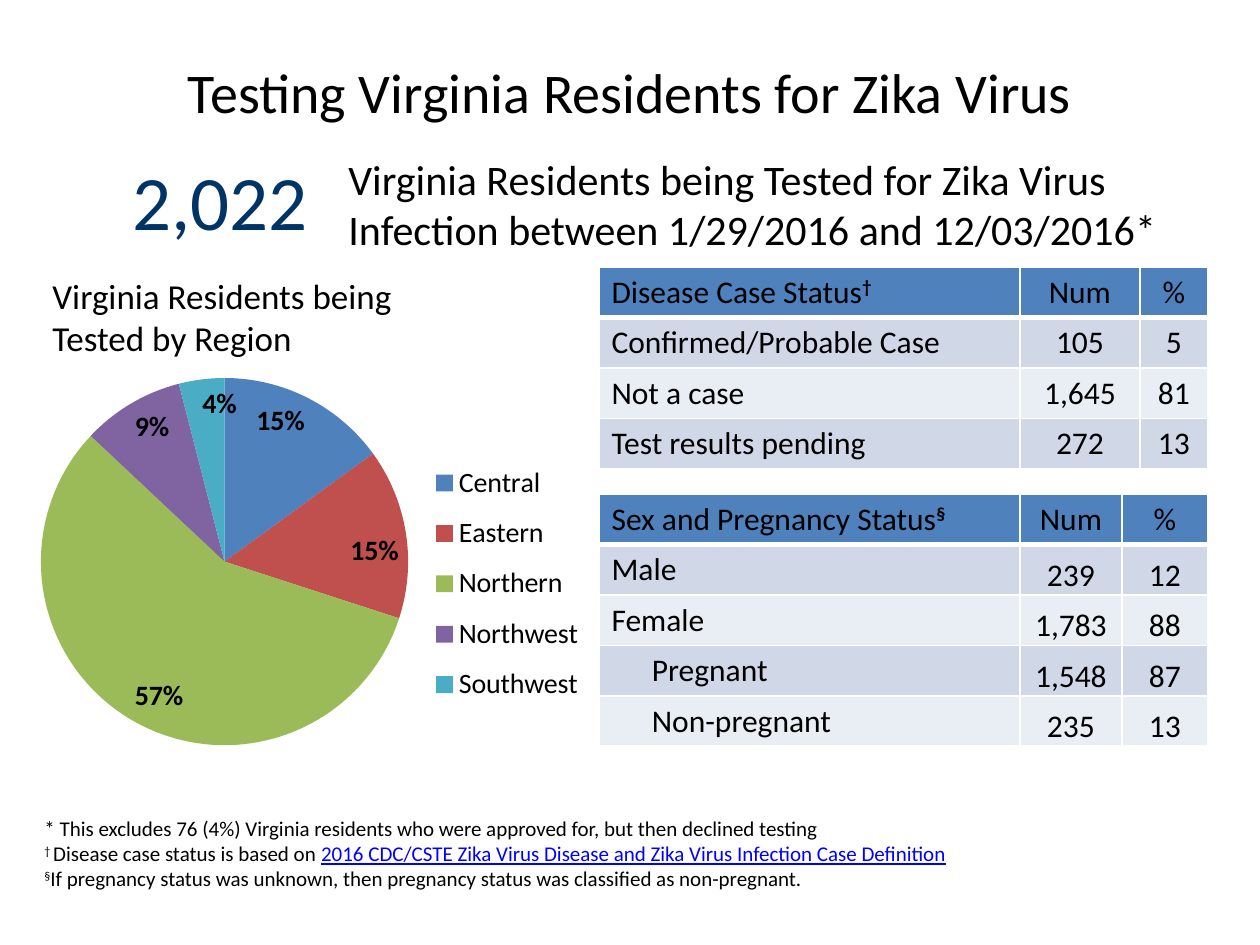
from lxml import etree
from pptx import Presentation
from pptx.chart.data import CategoryChartData
from pptx.dml.color import RGBColor
from pptx.enum.chart import XL_CHART_TYPE, XL_LABEL_POSITION, XL_LEGEND_POSITION
from pptx.enum.text import MSO_ANCHOR, PP_ALIGN
from pptx.oxml import parse_xml
from pptx.oxml.ns import nsdecls, qn
from pptx.util import Emu, Inches, Pt

FONT = "Calibri"
COLORS = {
    "text": "000000",
    "total": "003366",
    "link": "0000FF",
    "header": "4F81BD",
    "band_dark": "D0D8E8",
    "band_light": "E9EDF4",
    "border": "FFFFFF",
}
REGIONS = {
    "Central": (15, "4F81BD"),
    "Eastern": (15, "C0504D"),
    "Northern": (57, "9BBB59"),
    "Northwest": (9, "8064A2"),
    "Southwest": (4, "4BACC6"),
}
CASE_ROWS = [
    ("Confirmed/Probable Case", "105", "5"),
    ("Not a case", "1,645", "81"),
    ("Test results pending", "272", "13"),
]
SEX_ROWS = [
    ("Male", "239", "12"),
    ("Female", "1,783", "88"),
    ("Pregnant", "1,548", "87"),
    ("Non-pregnant", "235", "13"),
]
SUBGROUPS = {"Pregnant", "Non-pregnant"}
ROW_HEIGHT = 50


def px(value):
    return Emu(round(value * 914400 / 126))


def box(*lengths):
    return [px(length) for length in lengths]


def rgb(name):
    return RGBColor.from_string(COLORS[name])


def set_font(font, size, color="text", bold=None):
    font.name, font.size, font.bold = FONT, Pt(size), bold
    font.color.rgb = rgb(color)


def add_run(paragraph, text, superscript=False):
    run = paragraph.add_run()
    run.text = text
    if superscript:
        run._r.get_or_add_rPr().set("baseline", "30000")
    return run


def add_title(slide, text):
    title = slide.shapes.title
    title.left, title.top, title.width, title.height = box(63, 4, 1134, 174)
    title.text_frame.text = text
    title.text_frame.vertical_anchor = MSO_ANCHOR.MIDDLE
    paragraph = title.text_frame.paragraphs[0]
    paragraph.alignment = PP_ALIGN.CENTER
    set_font(paragraph.font, 32)


def add_text(slide, bounds, text, size, color="text"):
    frame = slide.shapes.add_textbox(*box(*bounds)).text_frame
    frame.word_wrap = True
    frame.text = text
    set_font(frame.paragraphs[0].font, size, color)
    return frame


def add_footnotes(slide):
    frame = add_text(
        slide, (32, 809, 1029, 140),
        "* This excludes 76 (4%) Virginia residents who were approved for, "
        "but then declined testing", 12)
    case_note, pregnancy_note = frame.add_paragraph(), frame.add_paragraph()
    for note in (case_note, pregnancy_note):
        set_font(note.font, 12)
    add_run(case_note, "† ", superscript=True)
    add_run(case_note, "Disease case status is based on ")
    citation = add_run(
        case_note,
        "2016 CDC/CSTE Zika Virus Disease and Zika Virus Infection Case Definition")
    citation.font.color.rgb = rgb("link")
    citation.font.underline = True
    add_run(pregnancy_note, "§", superscript=True)
    add_run(pregnancy_note, "If pregnancy status was unknown, then pregnancy "
                            "status was classified as non-pregnant.")


def set_borders(cell, bottom_width):
    properties = cell._tc.get_or_add_tcPr()
    widths = {"lnL": 1, "lnR": 1, "lnT": 1, "lnB": bottom_width}
    for index, (tag, width) in enumerate(widths.items()):
        properties.insert(index, parse_xml(
            f'<a:{tag} {nsdecls("a")} w="{Pt(width)}"><a:solidFill>'
            f'<a:srgbClr val="{COLORS["border"]}"/></a:solidFill></a:{tag}>'))


def style_cell(cell, fill, centered, bottom_width=1):
    cell.fill.solid()
    cell.fill.fore_color.rgb = rgb(fill)
    set_borders(cell, bottom_width)
    paragraph = cell.text_frame.paragraphs[0]
    set_font(paragraph.font, 18, bold=False)
    paragraph.alignment = PP_ALIGN.CENTER if centered else PP_ALIGN.LEFT
    return paragraph


def sink_number(cell):
    """Rest a number on the bottom of its cell with hardly any margin."""
    cell.vertical_anchor = MSO_ANCHOR.BOTTOM
    cell.margin_left = cell.margin_right = cell.margin_top = Inches(0.01)
    cell.margin_bottom = 0


def add_status_table(slide, top, widths, heading, mark, rows, sunken=False):
    bounds = box(599, top, sum(widths), ROW_HEIGHT * (len(rows) + 1))
    table = slide.shapes.add_table(len(rows) + 1, len(widths), *bounds).table
    for column, width in zip(table.columns, widths):
        column.width = px(width)
    for row_index, row in enumerate([(heading, "Num", "%"), *rows]):
        is_header = row_index == 0
        band = "band_dark" if row_index % 2 else "band_light"
        for column_index, text in enumerate(row):
            cell = table.cell(row_index, column_index)
            paragraph = style_cell(cell, "header" if is_header else band,
                                   column_index > 0, 3 if is_header else 1)
            add_run(paragraph, text)
            if is_header and column_index == 0:
                add_run(paragraph, mark, superscript=True).font.bold = True
            if text in SUBGROUPS:
                paragraph._p.get_or_add_pPr().set("marL", str(Inches(0.32)))
            if sunken and column_index and not is_header:
                sink_number(cell)


def place_chart_part(element, x, y, width, height, inner=False):
    """Fix the layout of a plot area or legend, in fractions of the chart."""
    values = {"xMode": "edge", "yMode": "edge", "x": x, "y": y, "w": width, "h": height}
    if inner:
        values = {"layoutTarget": "inner", **values}
    layout = element.find(qn("c:layout"))
    if layout is None:
        layout = etree.Element(qn("c:layout"))
        position = element.find(qn("c:legendPos"))
        element.insert(0 if position is None else 1, layout)
    manual = etree.SubElement(layout, qn("c:manualLayout"))
    for tag, value in values.items():
        etree.SubElement(manual, qn(f"c:{tag}")).set("val", str(value))


def add_region_chart(slide):
    data = CategoryChartData()
    data.categories = list(REGIONS)
    data.add_series("Series 1", [value for value, _ in REGIONS.values()])
    chart = slide.shapes.add_chart(
        XL_CHART_TYPE.PIE, *box(0, 378, 630, 378), data).chart
    chart.has_title = False
    set_font(chart.font, 10)
    chart.has_legend = True
    chart.legend.position = XL_LEGEND_POSITION.RIGHT
    chart.legend.include_in_layout = False
    set_font(chart.legend.font, 16)
    plot = chart.plots[0]
    plot.vary_by_categories = True
    for index, (_, color) in enumerate(REGIONS.values()):
        fill = plot.series[0].points[index].format.fill
        fill.solid()
        fill.fore_color.rgb = RGBColor.from_string(color)
    labels = plot.series[0].data_labels
    labels.show_percentage, labels.show_value = True, False
    labels.number_format, labels.number_format_is_linked = "0%", False
    labels.position = XL_LABEL_POSITION.INSIDE_END
    set_font(labels.font, 16, bold=True)
    plot_area = chart._chartSpace.chart.plotArea
    place_chart_part(plot_area, 0.065, 0, 0.583, 0.972, inner=True)
    place_chart_part(chart.legend._element, 0.68, 0.19, 0.25, 0.71)


def main():
    presentation = Presentation()
    presentation.slide_width, presentation.slide_height = box(1260, 945)
    slide = presentation.slides.add_slide(presentation.slide_layouts[5])
    add_title(slide, "Testing Virginia Residents for Zika Virus")
    add_text(slide, (120, 147, 210, 106), "2,022", 44, "total")
    add_text(slide, (336, 147, 852, 115), "Virginia Residents being Tested for "
             "Zika Virus Infection between 1/29/2016 and 12/03/2016*", 24)
    add_text(slide, (40, 268, 462, 97), "Virginia Residents being Tested by Region", 20)
    add_status_table(slide, 494, (421, 102, 86), "Sex and Pregnancy Status", "§",
                     SEX_ROWS, sunken=True)
    add_status_table(slide, 267, (421, 120, 68), "Disease Case Status", "†", CASE_ROWS)
    add_footnotes(slide)
    add_region_chart(slide)
    presentation.save("out.pptx")


if __name__ == "__main__":
    main()
